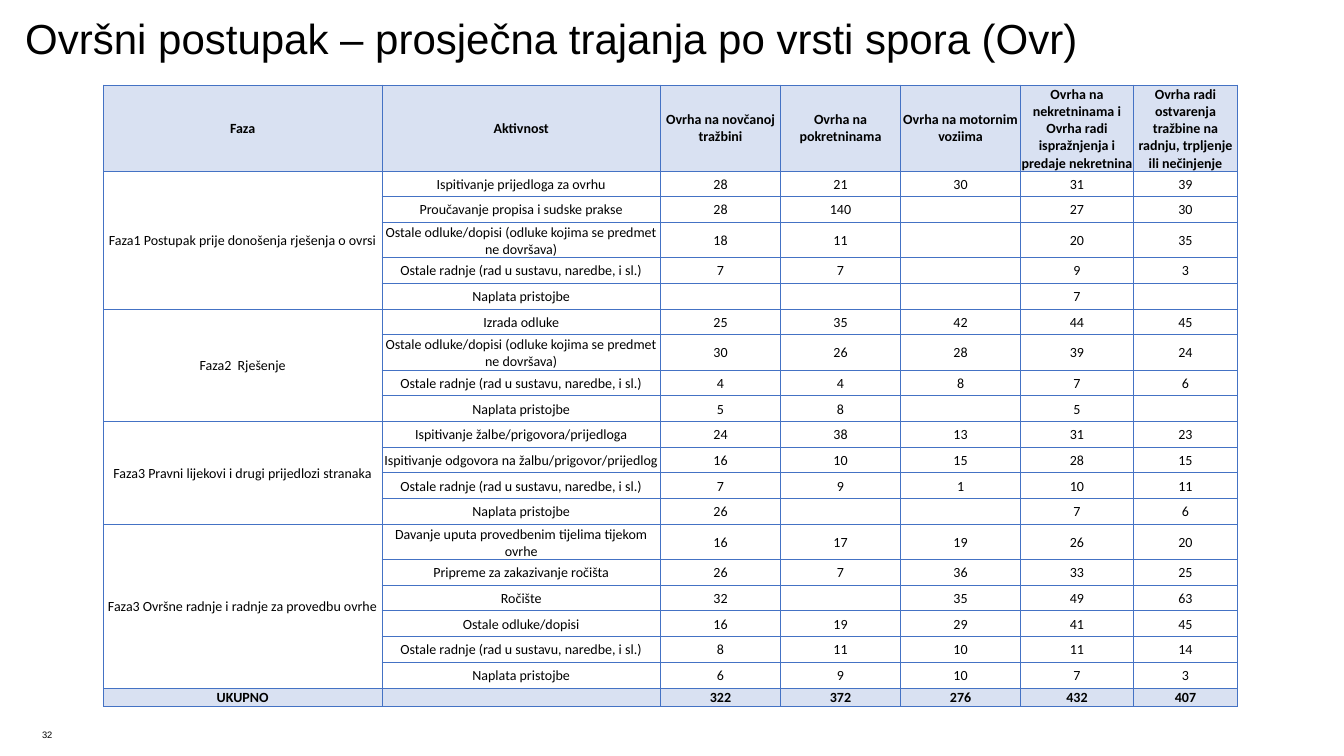
from dataclasses import dataclass

from lxml import etree
from pptx import Presentation
from pptx.dml.color import RGBColor
from pptx.enum.text import MSO_ANCHOR, PP_ALIGN
from pptx.oxml.ns import qn
from pptx.util import Inches, Pt

TOP, MIDDLE = MSO_ANCHOR.TOP, MSO_ANCHOR.MIDDLE
CENTER = PP_ALIGN.CENTER
BLANK_LAYOUT = 6

OTHER_DECISIONS = "Ostale odluke/dopisi (odluke kojima se predmet ne dovršava)"
OTHER_ACTIONS = "Ostale radnje (rad u sustavu, naredbe, i sl.)"
FEE = "Naplata pristojbe"

HEADINGS = [
    "Faza", "Aktivnost", "Ovrha na novčanoj tražbini", "Ovrha na pokretninama",
    "Ovrha na motornim voziima",
    "Ovrha na nekretninama i Ovrha radi ispražnjenja i predaje nekretnina",
    "Ovrha radi ostvarenja tražbine na radnju, trpljenje ili nečinjenje",
]
PHASES = [
    ("Faza1 Postupak prije donošenja rješenja o ovrsi", [
        ("Ispitivanje prijedloga za ovrhu", 28, 21, 30, 31, 39),
        ("Proučavanje propisa i sudske prakse", 28, 140, "", 27, 30),
        (OTHER_DECISIONS, 18, 11, "", 20, 35),
        (OTHER_ACTIONS, 7, 7, "", 9, 3),
        (FEE, "", "", "", 7, ""),
    ]),
    ("Faza2  Rješenje", [
        ("Izrada odluke", 25, 35, 42, 44, 45),
        (OTHER_DECISIONS, 30, 26, 28, 39, 24),
        (OTHER_ACTIONS, 4, 4, 8, 7, 6),
        (FEE, 5, 8, "", 5, ""),
    ]),
    ("Faza3 Pravni lijekovi i drugi prijedlozi stranaka", [
        ("Ispitivanje žalbe/prigovora/prijedloga", 24, 38, 13, 31, 23),
        ("Ispitivanje odgovora na žalbu/prigovor/prijedlog", 16, 10, 15, 28, 15),
        (OTHER_ACTIONS, 7, 9, 1, 10, 11),
        (FEE, 26, "", "", 7, 6),
    ]),
    ("Faza3 Ovršne radnje i radnje za provedbu ovrhe", [
        ("Davanje uputa provedbenim tijelima tijekom ovrhe", 16, 17, 19, 26, 20),
        ("Pripreme za zakazivanje ročišta", 26, 7, 36, 33, 25),
        ("Ročište", 32, "", 35, 49, 63),
        ("Ostale odluke/dopisi", 16, 19, 29, 41, 45),
        (OTHER_ACTIONS, 8, 11, 10, 11, 14),
        (FEE, 6, 9, 10, 7, 3),
    ]),
]
TOTALS = ["UKUPNO", "", 322, 372, 276, 432, 407]

COLUMN_SHARES = [20.73, 20.73, 8.93, 8.93, 8.93, 8.4, 7.75]
HEADER_SHARE, ACTIVITY_SHARE, TOTAL_SHARE = 11.38, 3.4, 1.8


@dataclass(frozen=True)
class Theme:
    ink: str = "000000"
    border: str = "4472C4"
    band: str = "D9E1F2"
    slide_font: str = "Arial"
    table_font: str = "Calibri"
    title_size: int = 36
    table_size: int = 12
    number_size: int = 8
    border_width: float = 0.5


class SlideBuilder:
    def __init__(self, deck, theme):
        self.deck = deck
        self.theme = theme
        self.slide = deck.slides.add_slide(deck.slide_layouts[BLANK_LAYOUT])

    def across(self, percent):
        return round(self.deck.slide_width * percent / 100)

    def down(self, percent):
        return round(self.deck.slide_height * percent / 100)

    def apply(self, target, formats):
        for attribute, value in formats.items():
            setattr(target, attribute, value)

    def style_font(self, font, name, size, bold=False):
        self.apply(font, {"name": name, "size": Pt(size), "bold": bold})
        font.color.rgb = RGBColor.from_string(self.theme.ink)

    def text(self, words, left, top, width, height, size, anchor, line_spacing=1.0):
        frame = self.slide.shapes.add_textbox(
            self.across(left), self.down(top), self.across(width), self.down(height)
        ).text_frame
        self.apply(frame, {
            "word_wrap": True, "vertical_anchor": anchor, "margin_left": 0,
            "margin_right": 0, "margin_top": 0, "margin_bottom": 0,
        })
        paragraph = frame.paragraphs[0]
        paragraph.line_spacing = line_spacing
        run = paragraph.add_run()
        run.text = words
        self.style_font(run.font, self.theme.slide_font, size)

    def borders(self, cell):
        properties = cell._tc.get_or_add_tcPr()
        for side in ("a:lnL", "a:lnR", "a:lnT", "a:lnB"):
            line = etree.SubElement(
                properties, qn(side), w=str(Pt(self.theme.border_width)))
            fill = etree.SubElement(line, qn("a:solidFill"))
            etree.SubElement(fill, qn("a:srgbClr"), val=self.theme.border)

    def cell(self, cell, value, banded):
        self.apply(cell, {
            "vertical_anchor": MIDDLE, "margin_left": Inches(0.01),
            "margin_right": Inches(0.01), "margin_top": Inches(0.02),
            "margin_bottom": 0,
        })
        self.borders(cell)
        if banded:
            cell.fill.solid()
            cell.fill.fore_color.rgb = RGBColor.from_string(self.theme.band)
        else:
            cell.fill.background()
        paragraph = cell.text_frame.paragraphs[0]
        paragraph.alignment = CENTER
        if value == "":
            etree.SubElement(paragraph._p, qn("a:endParaRPr"),
                             sz=str(self.theme.table_size * 100))
        else:
            run = paragraph.add_run()
            run.text = str(value)
            self.style_font(
                run.font, self.theme.table_font, self.theme.table_size, banded)

    def table(self, rows, spans, left, top, column_shares, row_shares):
        table = self.slide.shapes.add_table(
            len(rows), len(column_shares), self.across(left), self.down(top),
            self.across(sum(column_shares)), self.down(sum(row_shares))
        ).table
        self.apply(table, {"first_row": False, "horz_banding": False})
        for column, share in zip(table.columns, column_shares):
            column.width = self.across(share)
        for row, share in zip(table.rows, row_shares):
            row.height = self.down(share)
        for index, values in enumerate(rows):
            banded = index in (0, len(rows) - 1)
            for column, value in enumerate(values):
                self.cell(table.cell(index, column), value, banded)
        for first, last in spans:
            table.cell(first, 0).merge(table.cell(last, 0))


def phase_rows():
    rows, spans = [HEADINGS], []
    for phase, activities in PHASES:
        first = len(rows)
        for index, activity in enumerate(activities):
            rows.append(["" if index else phase, *activity])
        spans.append((first, len(rows) - 1))
    rows.append(TOTALS)
    return rows, spans


def main():
    deck = Presentation()
    deck.slide_width, deck.slide_height = Inches(16), Inches(9)
    theme = Theme()
    builder = SlideBuilder(deck, theme)
    builder.text("32", 3.13, 95.9, 2.25, 2.67, theme.number_size, MIDDLE)
    builder.text("Ovršni postupak – prosječna trajanja po vrsti spora (Ovr)",
                 1.88, 2.44, 84.38, 13.89, theme.title_size, TOP, 0.9)
    rows, spans = phase_rows()
    row_shares = [HEADER_SHARE, *[ACTIVITY_SHARE] * (len(rows) - 2), TOTAL_SHARE]
    builder.table(rows, spans, 7.69, 11.22, COLUMN_SHARES, row_shares)
    deck.save("out.pptx")


if __name__ == "__main__":
    main()
